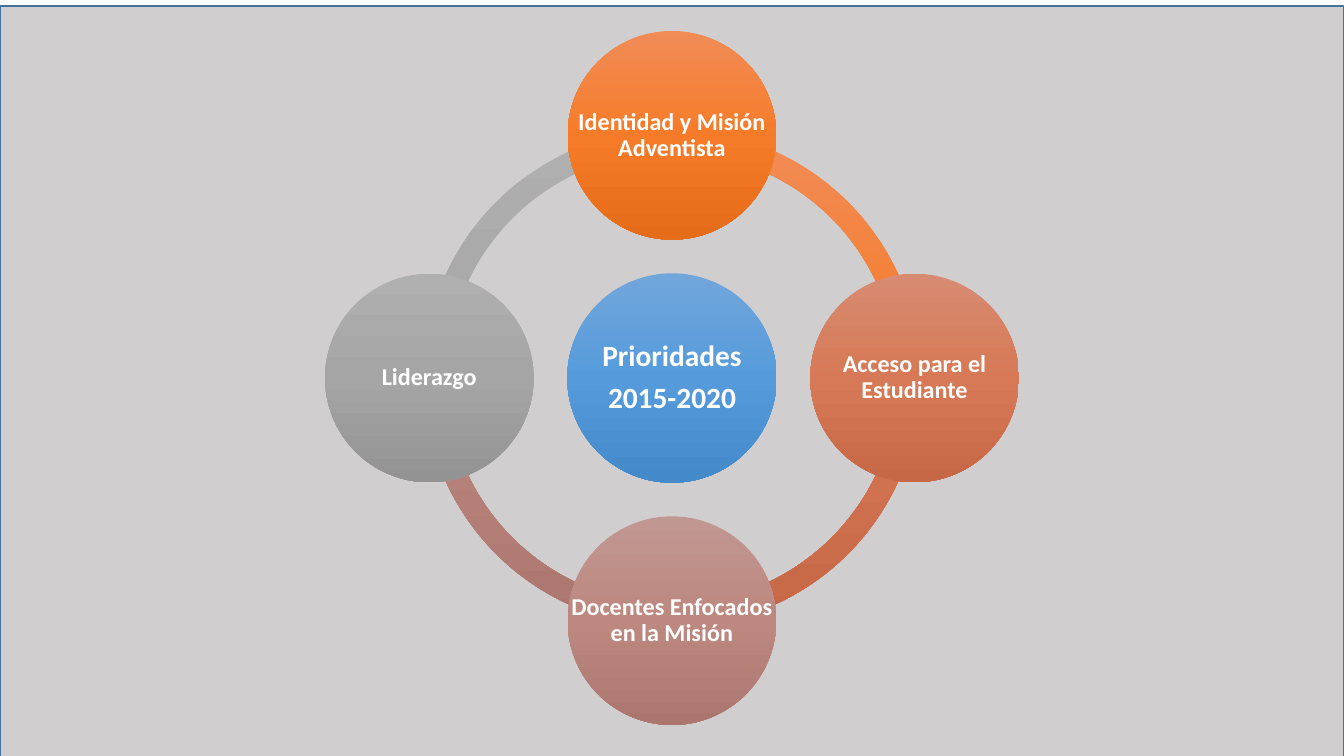
from copy import deepcopy
from math import cos, radians, sin

from pptx import Presentation
from pptx.dml.color import RGBColor
from pptx.enum.shapes import MSO_SHAPE
from pptx.enum.text import MSO_ANCHOR, PP_ALIGN
from pptx.util import Inches, Pt

PAGE_WIDTH, PAGE_HEIGHT = 17.78, 10
CENTER_X, CENTER_Y = 8.89, 5
ORBIT_RADIUS = 3.21
RING_SIZE = 6.58
RING_THICKNESS = 0.046
HUB_SIZE, PRIORITY_SIZE = 2.77, 2.76

BLUE = ("71A6DB", "559BDB", "448ACA")
ORANGE = ("F18C57", "F67B28", "E56C19")
RUST = ("D78B72", "D77956", "C66846")
ROSE = ("C19791", "BC8880", "AA766E")
GRAY = ("AFAFAF", "A5A5A5", "939393")

# Clockwise from the top; each also colours the ring quarter that follows it
PRIORITIES = [
    ("Identidad y Misión Adventista", ORANGE, ORANGE),
    ("Acceso para el Estudiante", RUST, RUST),
    ("Docentes Enfocados en la Misión", ROSE, ROSE),
    ("Liderazgo", GRAY, GRAY),
]


def color(hex_code):
    return RGBColor.from_string(hex_code)


def add_plain_shape(page, kind, left, top, width, height):
    shape = page.shapes.add_shape(
        kind, Inches(left), Inches(top), Inches(width), Inches(height))
    shape.shadow.inherit = False
    shape.line.fill.background()
    return shape


def fill_gradient(shape, hex_codes):
    """Spread the colours evenly from top to bottom."""
    shape.fill.gradient()
    shape.fill.gradient_angle = 270
    stop_list = shape._element.spPr.xpath(".//a:gsLst")[0]
    while len(stop_list) < len(hex_codes):
        stop_list.append(deepcopy(stop_list[0]))
    for index, (stop, hex_code) in enumerate(
            zip(shape.fill.gradient_stops, hex_codes)):
        stop.color.rgb = color(hex_code)
        stop.position = index / (len(hex_codes) - 1)


def add_background(page):
    panel = add_plain_shape(
        page, MSO_SHAPE.RECTANGLE, 0, 0.08, PAGE_WIDTH, PAGE_HEIGHT)
    panel.fill.solid()
    panel.fill.fore_color.rgb = color("D0CECE")
    panel.line.color.rgb = color("43739E")
    panel.line.width = Pt(1)


def add_ring_quarter(page, start_angle, hex_codes):
    arc = add_plain_shape(
        page, MSO_SHAPE.BLOCK_ARC, CENTER_X - RING_SIZE / 2,
        CENTER_Y - RING_SIZE / 2, RING_SIZE, RING_SIZE)
    # One degree is 0.6 in adjustment units
    arc.adjustments[0] = start_angle * 0.6
    arc.adjustments[1] = (start_angle + 90) % 360 * 0.6
    arc.adjustments[2] = RING_THICKNESS
    fill_gradient(arc, hex_codes)


def add_circle(page, center_x, center_y, size, hex_codes, lines, font_size):
    left, top = center_x - size / 2, center_y - size / 2
    circle = add_plain_shape(page, MSO_SHAPE.OVAL, left, top, size, size)
    fill_gradient(circle, hex_codes)

    # The label may use the full width of the circle
    box = page.shapes.add_textbox(
        Inches(left), Inches(top), Inches(size), Inches(size))
    frame = box.text_frame
    frame.word_wrap = True
    frame.vertical_anchor = MSO_ANCHOR.MIDDLE
    frame.margin_left = frame.margin_right = 0
    frame.margin_top = frame.margin_bottom = 0
    for index, line in enumerate(lines):
        para = frame.add_paragraph() if index else frame.paragraphs[0]
        para.alignment = PP_ALIGN.CENTER
        para.line_spacing = 0.9
        para.space_after = Pt(round(font_size * 0.35))
        span = para.add_run()
        span.text = line
        span.font.name = "Calibri"
        span.font.size = Pt(font_size)
        span.font.bold = True
        span.font.color.rgb = color("FFFFFF")


def main():
    deck = Presentation()
    deck.slide_width = Inches(PAGE_WIDTH)
    deck.slide_height = Inches(PAGE_HEIGHT)
    page = deck.slides.add_slide(deck.slide_layouts[6])
    add_background(page)

    # Ring, last quarter at the back
    for index in reversed(range(len(PRIORITIES))):
        add_ring_quarter(page, (270 + 90 * index) % 360, PRIORITIES[index][2])

    # Hub and the four priorities around it
    add_circle(page, CENTER_X, CENTER_Y, HUB_SIZE, BLUE,
               ["Prioridades", "2015-2020"], 28)
    for index, (label, hex_codes, _) in enumerate(PRIORITIES):
        angle = radians(90 * index - 90)
        add_circle(page, CENTER_X + ORBIT_RADIUS * cos(angle),
                   CENTER_Y + ORBIT_RADIUS * sin(angle),
                   PRIORITY_SIZE, hex_codes, [label], 23)

    deck.save("out.pptx")


if __name__ == "__main__":
    main()
